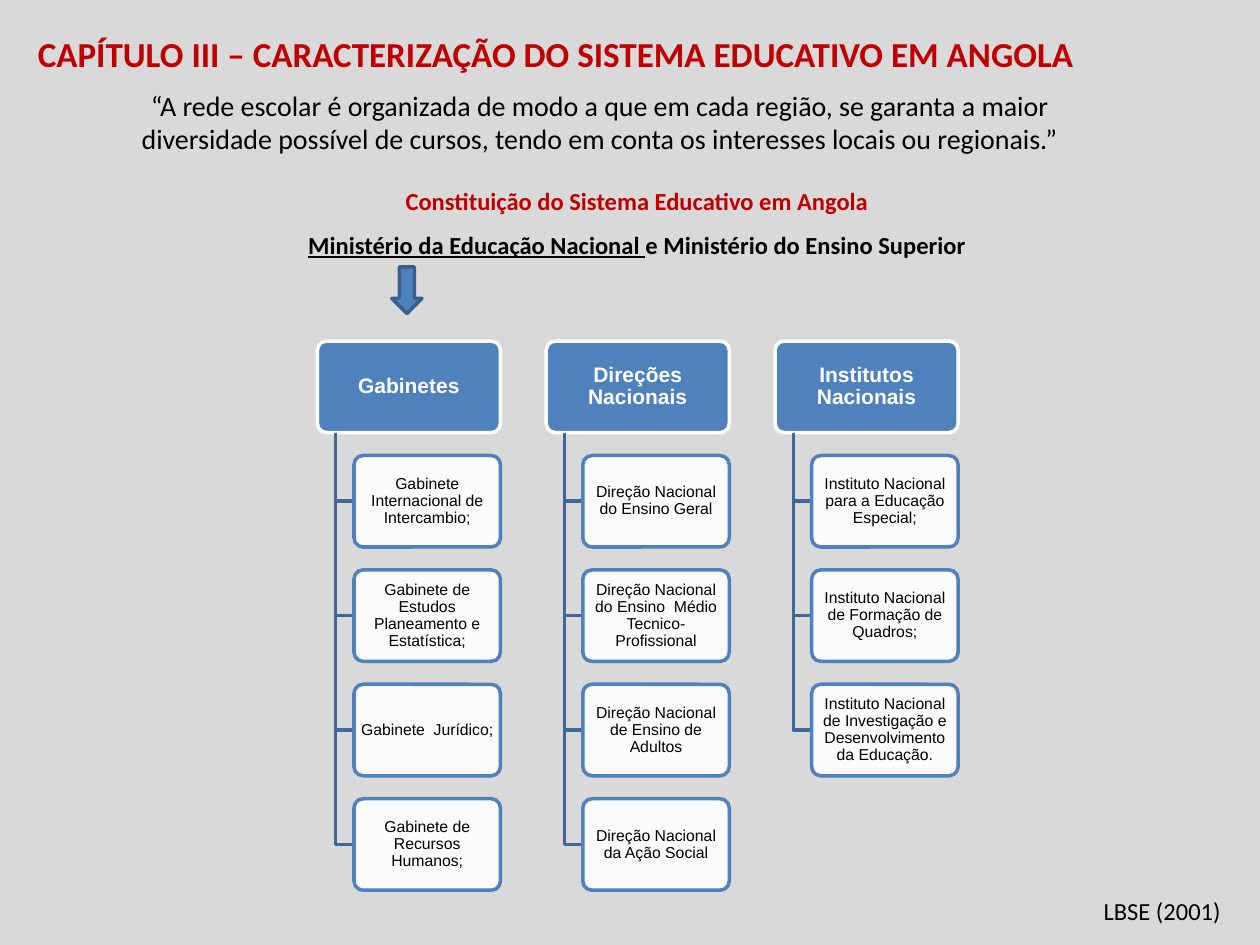
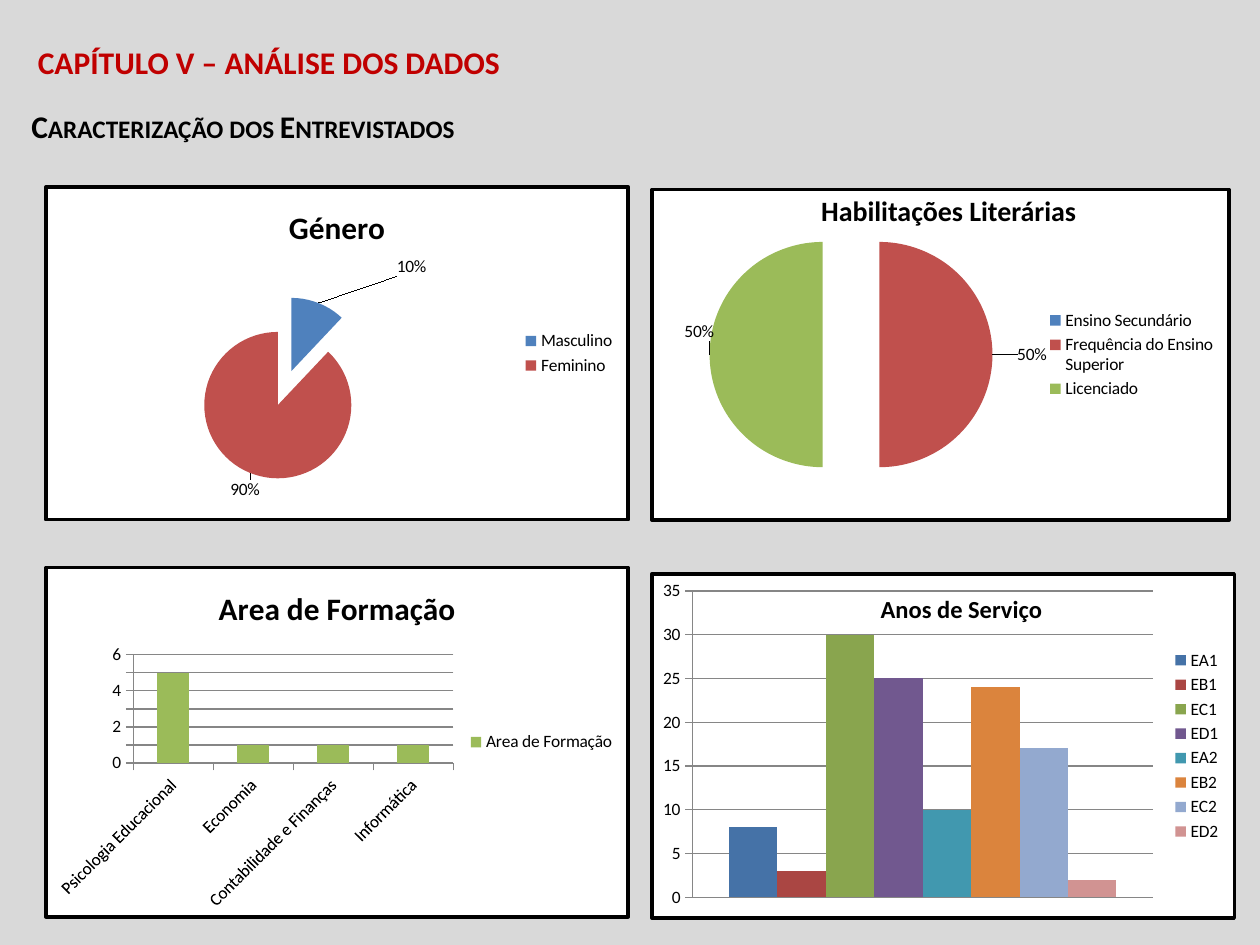
from lxml import etree
from pptx import Presentation
from pptx.chart.data import CategoryChartData as Data
from pptx.dml.color import RGBColor as Rgb
from pptx.enum.chart import XL_CHART_TYPE as Kind, XL_LABEL_POSITION as Spot
from pptx.enum.chart import XL_LEGEND_POSITION as Side, XL_TICK_MARK as Tick
from pptx.enum.shapes import MSO_SHAPE as Form
from pptx.enum.text import MSO_ANCHOR as Anchor, MSO_AUTO_SIZE as Auto, PP_ALIGN as Align
from pptx.oxml import parse_xml
from pptx.oxml.ns import nsdecls, qn
from pptx.util import Pt

RED = Rgb(0xC0, 0x00, 0x00)
BLACK = Rgb(0, 0, 0)
WHITE = Rgb(255, 255, 255)
GREY = Rgb(0xD9, 0xD9, 0xD9)
RULE = Rgb(0x86, 0x86, 0x86)
BLUE = Rgb(0x4F, 0x81, 0xBD)
BRICK = Rgb(0xC0, 0x50, 0x4D)
GREEN = Rgb(0x9B, 0xBB, 0x59)
STEM = Rgb(0x3F, 0x67, 0x97)
EDGE = Rgb(0x3A, 0x5F, 0x8C)
YEARS = [
    ("EA1", 8, Rgb(0x45, 0x72, 0xA7)),
    ("EB1", 3, Rgb(0xAA, 0x46, 0x43)),
    ("EC1", 30, Rgb(0x89, 0xA5, 0x4E)),
    ("ED1", 25, Rgb(0x71, 0x58, 0x8F)),
    ("EA2", 10, Rgb(0x41, 0x98, 0xAF)),
    ("EB2", 24, Rgb(0xDB, 0x84, 0x3D)),
    ("EC2", 17, Rgb(0x93, 0xA9, 0xCF)),
    ("ED2", 2, Rgb(0xD1, 0x93, 0x92)),
]


def write(para, words, size, tone=BLACK, bold=False, face="Calibri"):
    """Add one formatted run to the paragraph and return it."""
    run = para.add_run()
    run.text = words
    font = run.font
    font.size, font.bold, font.name = Pt(size), bold, face
    font.color.rgb = tone
    return run


def note(slide, box, align=Align.LEFT, wrap=True):
    """Add a text box and return its frame."""
    frame = slide.shapes.add_textbox(*map(Pt, box)).text_frame
    frame.word_wrap = wrap
    frame.paragraphs[0].alignment = align
    return frame


prs = Presentation()
prs.slide_width, prs.slide_height = Pt(720), Pt(540)
ground = prs.slide_master.background.fill
ground.solid()
ground.fore_color.rgb = GREY

# Slides and their titles
slides = []
for words, size, top in [
    ("CAPÍTULO III – CARACTERIZAÇÃO DO SISTEMA EDUCATIVO EM ANGOLA", 20, 15.1),
    ("CAPÍTULO V – ANÁLISE DOS DADOS", 18, 20.9),
]:
    slide = prs.slides.add_slide(prs.slide_layouts[5])
    title = slide.shapes.title
    title.left, title.top, title.width, title.height = map(Pt, (14.4, top, 686, 32))
    frame = title.text_frame
    frame.auto_size = Auto.NONE
    frame.vertical_anchor = Anchor.TOP
    frame.paragraphs[0].alignment = Align.LEFT
    write(frame.paragraphs[0], words, size, RED, True)
    slides.append(slide)
system, study = slides

# Slide 1: quotation, heading and source
frame = note(system, (62, 46.8, 561.6, 67.7), Align.CENTER)
write(frame.paragraphs[0], "“A rede escolar é organizada de modo a que em cada região, se "
      "garanta a maior diversidade possível de cursos, tendo em conta os interesses "
      "locais ou regionais.”", 16)
frame = note(system, (623.5, 508.3, 85, 24.5), wrap=False)
write(frame.paragraphs[0], "LBSE (2001)", 14)

frame = note(system, (62, 94.3, 604, 58.3), Align.CENTER)
head, sub = frame.paragraphs[0], frame.add_paragraph()
sub.alignment = Align.CENTER
head.line_spacing = sub.line_spacing = 1.5
write(head, "Constituição do Sistema Educativo em Angola", 14, RED, True)
write(sub, "Ministério da Educação Nacional ", 14, bold=True).font.underline = True
write(sub, "e Ministério do Ensino Superior", 14, bold=True)

arrow = system.shapes.add_shape(Form.DOWN_ARROW, *map(Pt, (223.9, 152.6, 17.3, 26.6)))
arrow.shadow.inherit = False
arrow.fill.solid()
arrow.fill.fore_color.rgb = BLUE
arrow.line.color.rgb = EDGE
arrow.line.width = Pt(2)

# Slide 1: three branches of the ministry
BRANCHES = [
    ("Gabinetes", [
        "Gabinete Internacional de Intercambio;",
        "Gabinete de Estudos Planeamento e Estatística;",
        "Gabinete  Jurídico;",
        "Gabinete de Recursos Humanos;"]),
    ("Direções Nacionais", [
        "Direção Nacional do Ensino Geral",
        "Direção Nacional do Ensino  Médio Tecnico-Profissional",
        "Direção Nacional de Ensino de Adultos",
        "Direção Nacional da Ação Social"]),
    ("Institutos Nacionais", [
        "Instituto Nacional para a Educação Especial;",
        "Instituto Nacional de Formação de Quadros;",
        "Instituto Nacional de Investigação e Desenvolvimento da Educação."]),
]
TOP, HIGH, WIDE = 194.9, 52.3, 104.6
STEP, ROW = 1.25 * WIDE, 1.25 * HIGH
for col, (name, parts) in enumerate(BRANCHES):
    left = 181.4 + col * STEP
    for row, words in enumerate([name] + parts):
        top = TOP + row * ROW
        lead = row == 0
        inset = 0 if lead else 0.2 * WIDE
        if not lead:
            trunk = left + WIDE / 10
            bend = system.shapes.build_freeform(Pt(trunk), Pt(TOP + HIGH))
            mid = Pt(top + HIGH / 2)
            bend.add_line_segments([(Pt(trunk), mid), (Pt(left + inset), mid)], close=False)
            stem = bend.convert_to_shape()
            stem.shadow.inherit = False
            stem.fill.background()
            stem.line.color.rgb = STEM
            stem.line.width = Pt(2)
        box = system.shapes.add_shape(
            Form.ROUNDED_RECTANGLE, *map(Pt, (left + inset, top, WIDE - inset, HIGH)))
        box.adjustments[0] = 0.1
        box.shadow.inherit = False
        box.fill.solid()
        box.fill.fore_color.rgb = BLUE if lead else WHITE
        if not lead:
            tint = box.fill._xPr.find(".//" + qn("a:srgbClr"))
            etree.SubElement(tint, qn("a:alpha")).set("val", "90000")
        box.line.color.rgb = WHITE if lead else BLUE
        box.line.width = Pt(2)
        frame = box.text_frame
        frame.word_wrap = True
        frame.vertical_anchor = Anchor.MIDDLE
        frame.margin_left = frame.margin_right = Pt(2.2 if lead else 1.4)
        frame.margin_top = frame.margin_bottom = Pt(1)
        para = frame.paragraphs[0]
        para.alignment = Align.CENTER
        para.line_spacing = 0.9
        write(para, words, 12 if lead else 9, WHITE if lead else BLACK, lead, "Arial")

# Slide 2: subtitle
frame = note(study, (10.8, 57.6, 262, 28.8), wrap=False)
run = write(frame.paragraphs[0], "Caracterização dos Entrevistados", 18, bold=True)
run.font._element.set("cap", "small")

# Slide 2: charts as kind, box, title, categories, series, colours, plot area
CHARTS = [
    (Kind.PIE, (25.2, 105.8, 334.8, 192.2), "Género", ["Masculino", "Feminino"],
     [("Género", [12, 88])], [BLUE, BRICK], (0.25, 0.33, 0.32, 0.55)),
    (Kind.PIE, (371.5, 107.3, 331.9, 190.8), None,
     ["Ensino Secundário", "Frequência do Ensino Superior", "Licenciado"],
     [("Habilitações", [0, 50, 50])], [BLUE, BRICK, GREEN], (0.1, 0.07, 0.49, 0.86)),
    (Kind.COLUMN_CLUSTERED, (25.2, 323.3, 334.8, 201.6), "Area de Formação",
     ["Psicologia Educacional", "Economia", "Contabilidade e Finanças", "Informática"],
     [("Area de Formação", [5, 1, 1, 1])], [GREEN], (0.15, 0.25, 0.55, 0.31)),
    (Kind.COLUMN_CLUSTERED, (371.5, 326.9, 334.8, 198.7), None, ["1"],
     [(name, [val]) for name, val, tone in YEARS], [tone for name, val, tone in YEARS],
     (0.07, 0.05, 0.79, 0.89)),
]
FRAME = (f'<c:spPr {nsdecls("c", "a")}><a:solidFill><a:srgbClr val="{WHITE}"/></a:solidFill>'
         f'<a:ln w="{Pt(2)}"><a:solidFill><a:srgbClr val="{BLACK}"/></a:solidFill></a:ln>'
         '</c:spPr>')
charts, layouts = [], []
for kind, box, name, cats, rows, tones, area in CHARTS:
    data = Data()
    data.categories = cats
    for row in rows:
        data.add_series(*row)
    chart = study.shapes.add_chart(kind, *map(Pt, box), data).chart
    charts.append(chart)
    chart.font.size, chart.font.name = Pt(10), "Calibri"
    chart.font.color.rgb = BLACK
    chart.has_legend = True
    chart.legend.position = Side.RIGHT
    chart.legend.include_in_layout = False
    chart.has_title = name is not None
    if name:
        write(chart.chart_title.text_frame.paragraphs[0], name, 18, bold=True)
    chart.element.find(qn("c:chart")).addnext(parse_xml(FRAME))
    layouts.append((chart.element.find(".//" + qn("c:plotArea")), 0, area))
    plot = chart.plots[0]
    plot.vary_by_categories = kind == Kind.PIE
    if kind == Kind.PIE:
        ser = plot.series[0]
        burst = etree.Element(qn("c:explosion"), val="25")
        ser._element.find(qn("c:tx")).addnext(burst)
        pieces = [ser.points[i] for i in range(len(cats))]
    else:
        plot.gap_width, plot.overlap = 150, 0
        pieces = plot.series
        axis = chart.value_axis
        axis.minimum_scale = 0
        axis.major_tick_mark = Tick.OUTSIDE
        axis.major_gridlines.format.line.color.rgb = RULE
        for side in (axis, chart.category_axis):
            side.format.line.color.rgb = RULE
    for piece, tone in zip(pieces, tones):
        piece.format.fill.solid()
        piece.format.fill.fore_color.rgb = tone

# Axis scales
areas, years = charts[2:]
for chart, top, unit in [(areas, 6, 1), (years, 35, 5)]:
    chart.value_axis.maximum_scale, chart.value_axis.major_unit = top, unit
years.category_axis.visible = False
axis = areas.category_axis
axis.major_tick_mark = Tick.OUTSIDE
axis.tick_labels.font.size = Pt(10)
axis._element.find(".//" + qn("a:bodyPr")).set("rot", "-2700000")

# Slice labels, each moved by a share of the chart
for chart, index, words, shift in [
    (charts[0], 0, "10%", (0.13, -0.06)),
    (charts[0], 1, "90%", (0.02, 0)),
    (charts[1], 1, "50%", (0.03, 0)),
    (charts[1], 2, "50%", (0.02, -0.07)),
]:
    ser = chart.plots[0].series[0]
    label = ser.points[index].data_label
    write(label.text_frame.paragraphs[0], words, 10)
    label.position = Spot.OUTSIDE_END
    ser.data_labels.show_value = False
    layouts.append((ser._element.findall(".//" + qn("c:dLbl"))[-1], 1, shift))

# Manual layouts of plot areas and labels
for node, place, sizes in layouts:
    for old in node.findall(qn("c:layout")):
        node.remove(old)
    layout = etree.Element(qn("c:layout"))
    manual = etree.SubElement(layout, qn("c:manualLayout"))
    if len(sizes) == 4:
        for tag, val in [("layoutTarget", "inner"), ("xMode", "edge"), ("yMode", "edge")]:
            etree.SubElement(manual, qn("c:" + tag), val=val)
    for tag, val in zip("xywh", sizes):
        etree.SubElement(manual, qn("c:" + tag), val=str(val))
    node.insert(place, layout)

# Headings that lie over the right-hand charts
for words, size, box in [
    ("Habilitações Literárias", 16, (462.2, 107.3, 164.2, 26.6)),
    ("Anos de Serviço", 14, (496.1, 336.2, 147.6, 24.5)),
]:
    write(note(study, box).paragraphs[0], words, size, bold=True)

prs.save("out.pptx")
